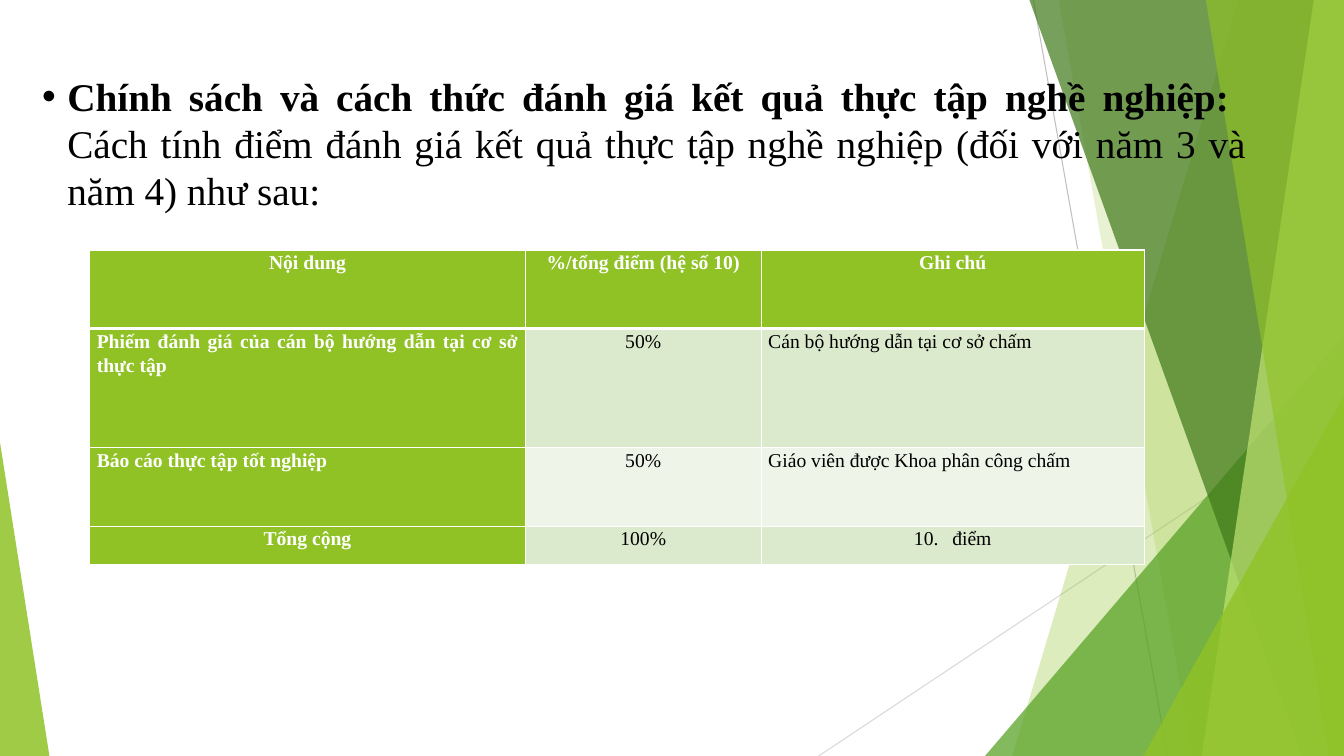
from pptx import Presentation
from pptx.dml.color import RGBColor
from pptx.enum.shapes import MSO_CONNECTOR as Connector, MSO_SHAPE as Shape
from pptx.enum.text import PP_ALIGN as Align
from pptx.oxml.ns import qn
from pptx.oxml.xmlchemy import OxmlElement as element
from pptx.util import Inches, Pt

WIDTH, HEIGHT = 13.33, 7.5
BLACK = RGBColor(0x00, 0x00, 0x00)
WHITE = RGBColor(0xFF, 0xFF, 0xFF)
GRAY = RGBColor(0xBF, 0xBF, 0xBF)
LIGHT_GRAY = RGBColor(0xD9, 0xD9, 0xD9)
LIME = RGBColor(0x90, 0xC2, 0x26)
PALE_LIME = RGBColor(0xC0, 0xE4, 0x74)
GREEN = RGBColor(0x54, 0xA0, 0x21)
DARK_GREEN = RGBColor(0x3F, 0x78, 0x19)
BAND_DARK = RGBColor(0xDB, 0xE9, 0xCD)
BAND_LIGHT = RGBColor(0xEE, 0xF4, 0xE8)


def add_node(parent, tag, **attributes):
    node = element(tag)
    for name, value in attributes.items():
        node.set(name, str(value))
    parent.append(node)
    return node


class SlideBuilder:
    font = "Times New Roman"

    def __init__(self, page):
        self.page = page

    def line(self, start, end, color):
        line = self.page.shapes.add_connector(
            Connector.STRAIGHT, *map(Inches, start + end))
        line.line.color.rgb = color
        line.line.width = Pt(0.75)
        add_node(line._element.spPr, "a:effectLst")

    def paint(self, shape, color, opacity):
        shape.shadow.inherit = False
        shape.fill.solid()
        shape.fill.fore_color.rgb = color
        shape.line.fill.background()
        tint = shape._element.spPr.find(".//" + qn("a:srgbClr"))
        add_node(tint, "a:alpha", val=opacity * 1000)

    def sliver(self, top_x, bottom_x, color, opacity):
        """Area between a slanted edge and the right side of the slide."""
        corners = [(WIDTH, 0), (WIDTH, HEIGHT), (bottom_x, HEIGHT)]
        outline = self.page.shapes.build_freeform(Inches(top_x), 0, scale=1.0)
        outline.add_line_segments(
            [(Inches(x), Inches(y)) for x, y in corners], close=True)
        self.paint(outline.convert_to_shape(), color, opacity)

    def triangle(self, left, width, height, apex, color, opacity):
        """Triangle that stands on the bottom of the slide."""
        shape = self.page.shapes.add_shape(
            Shape.ISOSCELES_TRIANGLE, Inches(left), Inches(HEIGHT - height),
            Inches(width), Inches(height))
        shape.adjustments[0] = apex
        self.paint(shape, color, opacity)

    def format(self, span, size, color, bold):
        span.font.name = self.font
        span.font.size = Pt(size)
        span.font.color.rgb = color
        span.font.bold = bold

    def hang(self, para, indent):
        properties = para._p.get_or_add_pPr()
        properties.set("marL", str(Inches(indent)))
        properties.set("indent", str(-Inches(indent)))
        return properties

    def title(self, left, top, width, height, heading, detail):
        box = self.page.shapes.add_textbox(
            *map(Inches, (left, top, width, height)))
        box.text_frame.word_wrap = True
        para = box.text_frame.paragraphs[0]
        para.text = heading + "\v" + detail
        para.alignment = Align.JUSTIFY
        for span, bold in zip(para.runs, (True, False)):
            self.format(span, 28, BLACK, bold)
        properties = self.hang(para, 0.25)
        add_node(properties, "a:buFont", typeface="Arial")
        add_node(properties, "a:buChar", char="•")

    def borders(self, cell, bottom):
        properties = cell._tc.get_or_add_tcPr()
        for side, width in zip("LRTB", (1, 1, 1, bottom)):
            edge = add_node(properties, "a:ln" + side, w=Pt(width))
            fill = add_node(edge, "a:solidFill")
            add_node(fill, "a:srgbClr", val=WHITE)

    def cell(self, cell, text, align, fill, header, bottom):
        self.borders(cell, bottom)
        cell.fill.solid()
        cell.fill.fore_color.rgb = fill
        cell.margin_left = cell.margin_right = Inches(0.07)
        cell.margin_top = cell.margin_bottom = 0
        para = cell.text_frame.paragraphs[0]
        para.text = text
        para.alignment = align
        para.line_spacing = 1.1
        para.space_before = Pt(4)
        self.format(para.runs[0], 14, WHITE if header else BLACK, header)
        return para

    def table(self, left, top, widths, heights, rows):
        table = self.page.shapes.add_table(
            len(rows), len(widths), Inches(left), Inches(top),
            Inches(sum(widths)), Inches(sum(heights))).table
        for column, width in zip(table.columns, widths):
            column.width = Inches(width)
        for row, height in zip(table.rows, heights):
            row.height = Inches(height)
        last = len(rows) - 1
        for r, texts in enumerate(rows):
            for c, text in enumerate(texts):
                header = r == 0 or c == 0
                centered = r in (0, last) or c == 1
                band = BAND_DARK if r % 2 else BAND_LIGHT
                para = self.cell(
                    table.cell(r, c), text,
                    Align.CENTER if centered else Align.JUSTIFY,
                    LIME if header else band, header, 1 if r else 3)
        # The total in the last cell is a numbered item
        add_node(self.hang(para, 0.38), "a:buAutoNum",
                 type="arabicPeriod", startAt=10)


def main():
    deck = Presentation()
    deck.slide_width, deck.slide_height = Inches(WIDTH), Inches(HEIGHT)
    slide = SlideBuilder(deck.slides.add_slide(deck.slide_layouts[6]))

    # Background facets
    slide.line((10.25, 0), (11.58, HEIGHT), GRAY)
    slide.line((WIDTH, 4.03), (8.12, HEIGHT), LIGHT_GRAY)
    slide.sliver(12.28, 10.04, LIME, 30)
    slide.sliver(10.5, 11.83, LIME, 20)
    slide.triangle(9.77, 3.56, 4.17, 1, GREEN, 72)
    slide.sliver(10.21, 12.91, DARK_GREEN, 70)
    slide.sliver(13.03, 11.92, PALE_LIME, 70)
    slide.sliver(11.96, 13.18, LIME, 65)
    slide.triangle(11.34, 1.99, 3.57, 1, LIME, 80)
    slide.triangle(0, 0.49, 3.11, 0, LIME, 85)

    # Title
    slide.title(
        0.32, 0.67, 12.14, 1.44,
        "Chính sách và cách thức đánh giá kết quả thực tập nghề nghiệp: ",
        "Cách tính điểm đánh giá kết quả thực tập nghề nghiệp "
        "(đối với năm 3 và năm 4) như sau:")

    # Grading table
    slide.table(0.89, 2.48, (4.32, 2.34, 3.8), (0.78, 1.18, 0.78, 0.38), [
        ("Nội dung", "%/tổng điểm (hệ số 10)", "Ghi chú"),
        ("Phiếm đánh giá của cán bộ hướng dẫn tại cơ sở thực tập", "50%",
         "Cán bộ hướng dẫn tại cơ sở chấm"),
        ("Báo cáo thực tập tốt nghiệp", "50%",
         "Giáo viên được Khoa phân công chấm"),
        ("Tổng cộng", "100%", "điểm"),
    ])

    deck.save("out.pptx")


if __name__ == "__main__":
    main()
